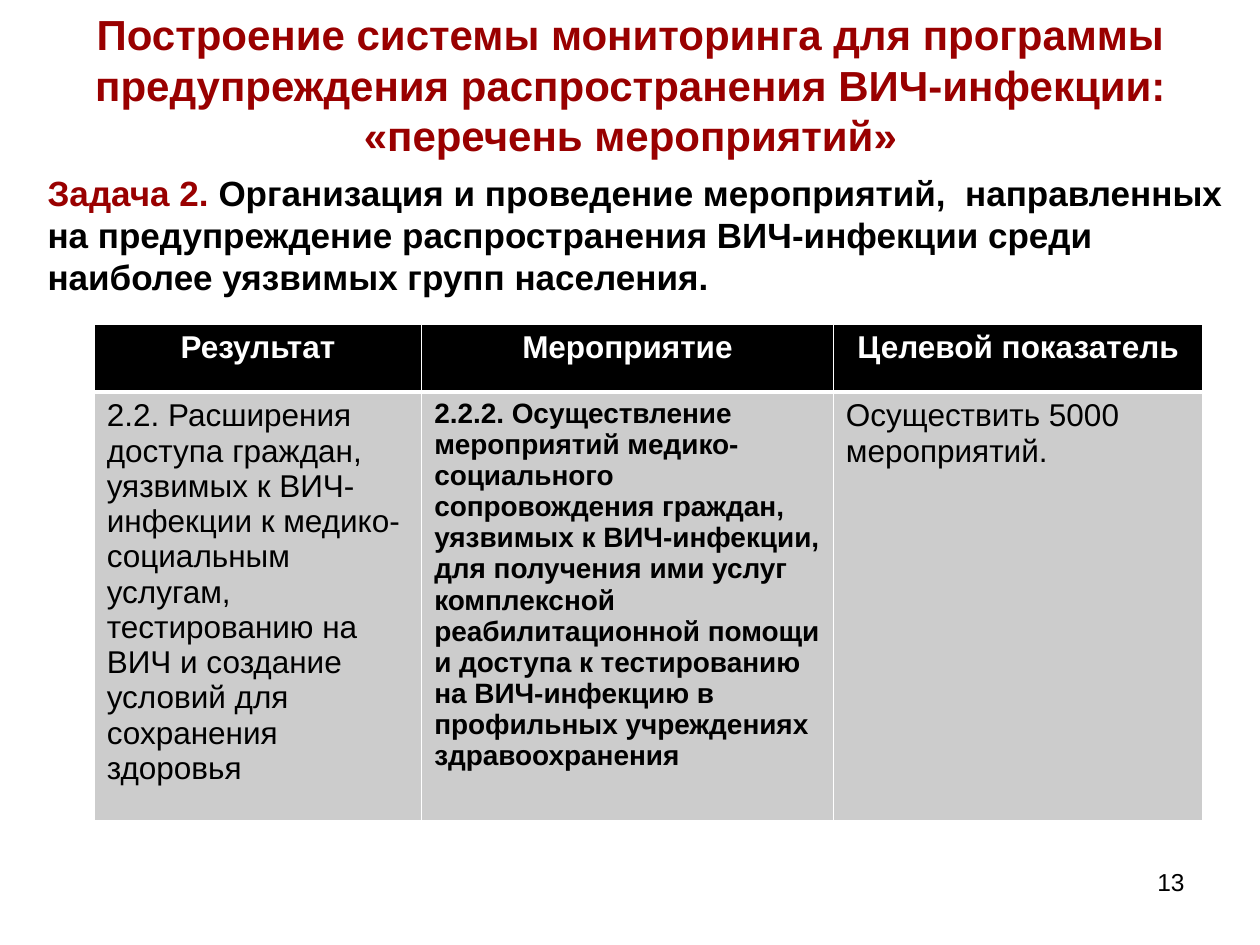
from dataclasses import dataclass
from lxml import etree
from pptx import Presentation
from pptx import util as u
from pptx.dml.color import RGBColor
from pptx.enum import text as t
from pptx.oxml.ns import qn


@dataclass(frozen=True)
class Theme:
    font: str = "Arial"
    red: str = "990000"
    black: str = "000000"
    white: str = "FFFFFF"
    gray: str = "CCCCCC"
    title: int = 24
    task: int = 20
    cell: int = 18
    small: int = 16
    page: int = 14


THEME = Theme()
LEFT, MID, RIGHT = t.PP_ALIGN.LEFT, t.PP_ALIGN.CENTER, t.PP_ALIGN.RIGHT


def write(para, words, size, color=THEME.black, bold=False, align=LEFT):
    """Add words to a paragraph; a newline becomes a line break."""
    para.alignment = align
    for i, line in enumerate(words.split("\n")):
        if i:
            para.add_line_break()
        run = para.add_run()
        run.text = line
        font = run.font
        font.name, font.size, font.bold = THEME.font, u.Pt(size), bold
        font.color.rgb = RGBColor.from_string(color)


def add_text(slide, box):
    frame = slide.shapes.add_textbox(*map(u.Cm, box)).text_frame
    frame.word_wrap = True
    return frame.paragraphs[0]


def add_title(slide, box, words):
    head = slide.shapes.title
    head.left, head.top, head.width, head.height = map(u.Cm, box)
    frame = head.text_frame
    frame.auto_size = t.MSO_AUTO_SIZE.NONE
    frame.vertical_anchor = t.MSO_ANCHOR.MIDDLE
    frame.margin_bottom = u.Cm(1)  # lifts the title clear of the task
    write(frame.paragraphs[0], words, THEME.title, THEME.red, True, MID)


def add_task(slide, box, label, words):
    para = add_text(slide, box)
    write(para, label, THEME.task, THEME.red, True)
    write(para, words, THEME.task, bold=True)


def set_edges(cell, base):
    """Draw white cell borders, with the given bottom width in points."""
    props = cell._tc.get_or_add_tcPr()
    widths = {"a:lnL": 1, "a:lnR": 1, "a:lnT": 1, "a:lnB": base}
    for i, (tag, width) in enumerate(widths.items()):
        line = etree.Element(qn(tag), w=str(u.Pt(width)))
        fill = etree.SubElement(line, qn("a:solidFill"))
        etree.SubElement(fill, qn("a:srgbClr"), val=THEME.white)
        props.insert(i, line)


def add_grid(slide, box, cols, rows, heads, body):
    grid = slide.shapes.add_table(len(rows), len(cols), *map(u.Cm, box)).table
    for col, width in zip(grid.columns, cols):
        col.width = u.Cm(width)
    for row, height in zip(grid.rows, rows):
        row.height = u.Cm(height)
    looks = [dict(size=THEME.cell, color=THEME.white, bold=True, align=MID)] * len(heads)
    plain = dict(size=THEME.cell)
    strong = dict(size=THEME.small, bold=True)
    lines = [
        (heads, looks, THEME.black, 3),
        (body, [plain, strong, plain], THEME.gray, 1),
    ]
    for r, (texts, styles, fill, base) in enumerate(lines):
        for c, (words, style) in enumerate(zip(texts, styles)):
            cell = grid.cell(r, c)
            cell.fill.solid()
            cell.fill.fore_color.rgb = RGBColor.from_string(fill)
            set_edges(cell, base)
            write(cell.text_frame.paragraphs[0], words, **style)


def add_page(slide, box, number):
    write(add_text(slide, box), number, THEME.page, align=RIGHT)


def main():
    deck = Presentation()
    deck.slide_width, deck.slide_height = u.Cm(25.4), u.Cm(19.05)
    slide = deck.slides.add_slide(deck.slide_layouts[5])

    # Heading and task
    add_title(
        slide, (0.71, 0.33, 24, 3.61),
        "Построение системы мониторинга для программы предупреждения "
        "распространения ВИЧ-инфекции:\n«перечень мероприятий»",
    )
    add_task(
        slide, (0.71, 3.33, 24.21, 2.82), "Задача 2. ",
        "Организация и проведение мероприятий,  направленных на предупреждение "
        "распространения ВИЧ-инфекции среди наиболее уязвимых групп населения.",
    )

    # Table of measures
    cols, rows = (6.6, 8.3, 7.45), (1.37, 8.65)
    add_grid(
        slide, (1.9, 6.53, sum(cols), sum(rows)), cols, rows,
        ("Результат", "Мероприятие", "Целевой показатель"),
        (
            "2.2. Расширения доступа граждан, уязвимых к ВИЧ-инфекции к "
            "медико-социальным услугам, тестированию на ВИЧ и создание условий "
            "для сохранения здоровья",
            "2.2.2. Осуществление мероприятий медико-социального сопровождения "
            "граждан, уязвимых к ВИЧ-инфекции, для получения ими услуг "
            "комплексной реабилитационной помощи и доступа к тестированию на "
            "ВИЧ-инфекцию в профильных учреждениях здравоохранения",
            "Осуществить 5000 мероприятий.",
        ),
    )

    # Page number
    add_page(slide, (18.21, 17.35, 5.92, 1.32), "13")
    deck.save("out.pptx")


if __name__ == "__main__":
    main()
